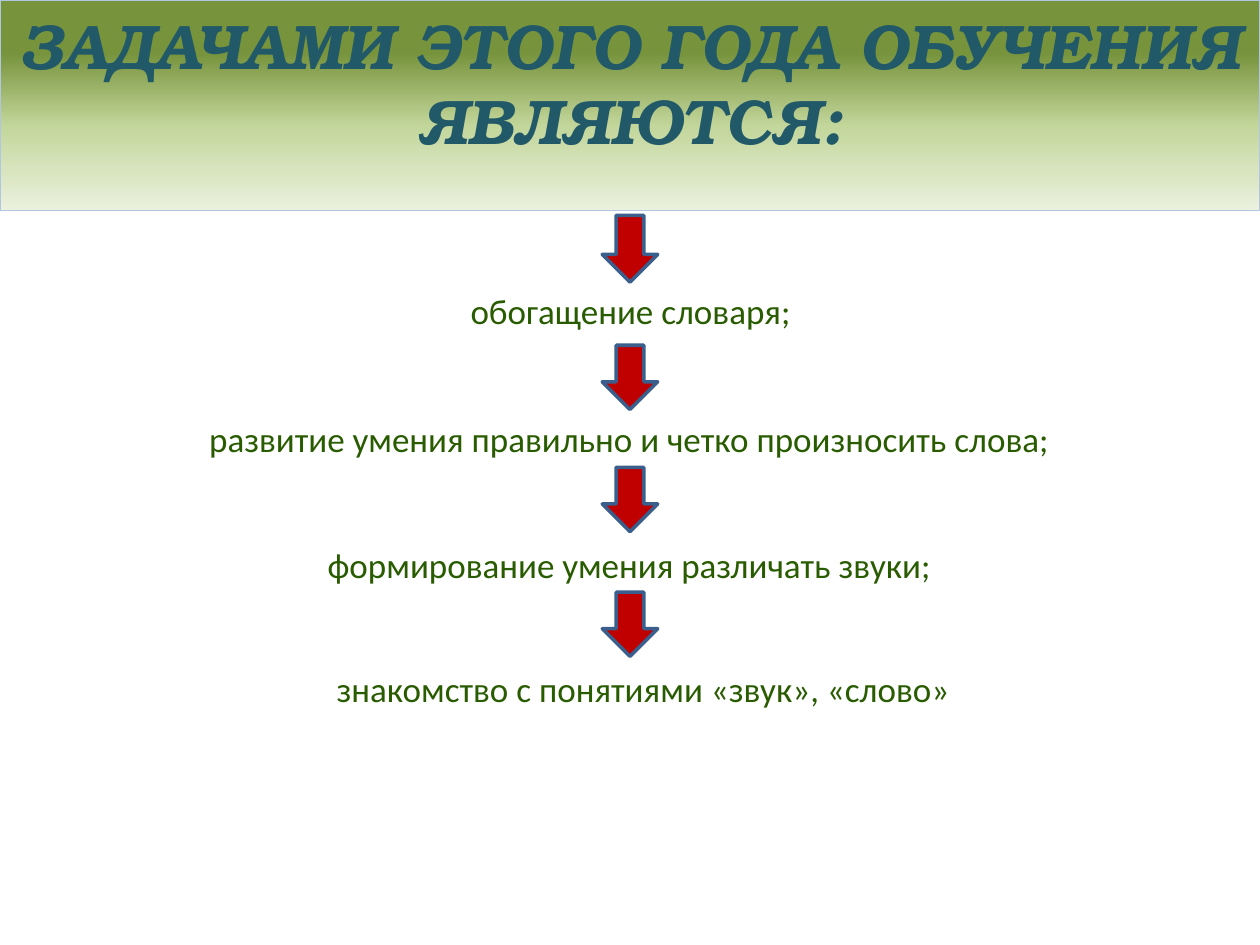
from typing import NamedTuple

import lxml.etree
import pptx
import pptx.dml.color
import pptx.enum.shapes
import pptx.enum.text
import pptx.oxml.ns
import pptx.util

RGB = pptx.dml.color.RGBColor
ANCHOR = pptx.enum.text.MSO_ANCHOR
CENTER = pptx.enum.text.PP_ALIGN.CENTER

TITLE_TEXT = RGB(0x21, 0x59, 0x68)
TITLE_LINE = RGB(0xB0, 0xC6, 0xE1)
TASK_TEXT = RGB(0x29, 0x5C, 0x00)
ARROW_FILL = RGB(0xC0, 0x00, 0x00)
ARROW_LINE = RGB(0x3A, 0x5F, 0x8C)
TITLE_STOPS = (
    (25, RGB(0x77, 0x93, 0x3C)),
    (60, RGB(0xC3, 0xD6, 0x9B)),
    (80, RGB(0xD7, 0xE4, 0xBD)),
    (100, RGB(0xEB, 0xF1, 0xDE)),
)

COLUMNS, ROWS = 100, 75
CELL = pptx.util.Inches(0.1)
ARROW_WIDTH = 4.4


class Box(NamedTuple):
    """A place on the grid, in columns and rows."""
    left: float
    top: float
    width: float
    height: float

    def emu(self) -> list[int]:
        return [round(n * CELL) for n in self]


class Task(NamedTuple):
    text: str
    box: Box
    arrow_top: float
    arrow_height: float = 5.1
    anchor: ANCHOR = ANCHOR.BOTTOM


TASKS = (
    Task("обогащение словаря;", Box(9.2, 22.5, 81.7, 4.4), 17.1, 5.3, ANCHOR.TOP),
    Task("развитие умения правильно и четко произносить слова;",
         Box(2.6, 31.3, 94.7, 5.7), 27.4),
    Task("формирование умения различать звуки;", Box(17.2, 41.3, 65.5, 5.7), 37.1),
    Task("знакомство с понятиями «звук», «слово»", Box(18.3, 51.1, 65.5, 5.7), 47),
)


def fill_downward(shape, stops) -> None:
    """Fill with a gradient running from top to bottom."""
    qn = pptx.oxml.ns.qn
    grad = lxml.etree.Element(qn("a:gradFill"), rotWithShape="1")
    gs_list = lxml.etree.SubElement(grad, qn("a:gsLst"))
    for percent, color in stops:
        gs = lxml.etree.SubElement(gs_list, qn("a:gs"), pos=str(percent * 1000))
        lxml.etree.SubElement(gs, qn("a:srgbClr"), val=str(color))
    lxml.etree.SubElement(grad, qn("a:lin"), ang="5400000", scaled="0")
    shape.fill.background()
    sp_pr = shape.element.spPr
    sp_pr.replace(sp_pr.find(qn("a:noFill")), grad)


def write(shape, text: str, font_name: str, size: int, color: RGB, anchor: ANCHOR):
    tf = shape.text_frame
    tf.word_wrap = True
    tf.auto_size = pptx.enum.text.MSO_AUTO_SIZE.NONE
    tf.vertical_anchor = anchor
    p = tf.paragraphs[0]
    p.text = text
    p.alignment = CENTER
    p.font.name = font_name
    p.font.size = pptx.util.Pt(size)
    p.font.color.rgb = color
    return p


def format_title(title) -> None:
    title.left, title.top, title.width, title.height = Box(0, 0, COLUMNS, 16.7).emu()
    fill_downward(title, TITLE_STOPS)
    title.line.color.rgb = TITLE_LINE
    title.line.width = pptx.util.Pt(0.75)
    p = write(title, "ЗАДАЧАМИ ЭТОГО ГОДА ОБУЧЕНИЯ ЯВЛЯЮТСЯ:",
              "TeX Gyre Bonum", 36, TITLE_TEXT, ANCHOR.TOP)
    p.font.bold = p.font.italic = True


def add_task(s, task: Task) -> None:
    arrow_box = Box((COLUMNS - ARROW_WIDTH) / 2, task.arrow_top,
                    ARROW_WIDTH, task.arrow_height)
    arrow = s.shapes.add_shape(pptx.enum.shapes.MSO_SHAPE.DOWN_ARROW, *arrow_box.emu())
    arrow.shadow.inherit = False
    arrow.fill.solid()
    arrow.fill.fore_color.rgb = ARROW_FILL
    arrow.line.color.rgb = ARROW_LINE
    arrow.line.width = pptx.util.Pt(2)
    label = s.shapes.add_textbox(*task.box.emu())
    write(label, task.text, "Calibri", 20, TASK_TEXT, task.anchor)


def main() -> None:
    prs = pptx.Presentation()
    prs.slide_width, prs.slide_height = COLUMNS * CELL, ROWS * CELL
    s = prs.slides.add_slide(prs.slide_layouts.get_by_name("Title Only"))
    format_title(s.shapes.title)
    for task in TASKS:
        add_task(s, task)
    prs.save("out.pptx")


if __name__ == "__main__":
    main()
